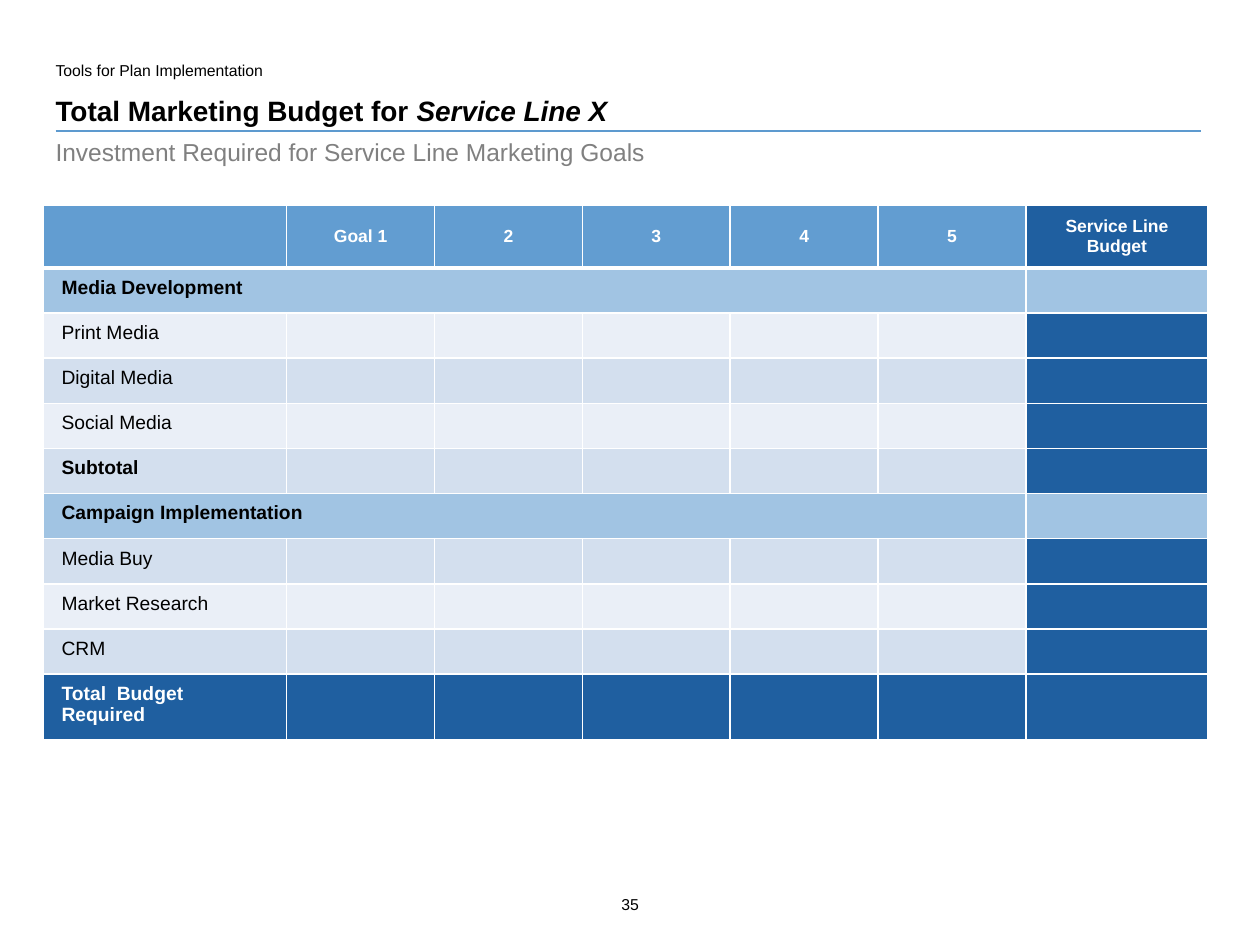
from dataclasses import dataclass
from lxml.etree import SubElement
from pptx import Presentation
from pptx.dml.color import RGBColor as Rgb
from pptx.enum.shapes import MSO_CONNECTOR as Link
from pptx.enum.text import MSO_ANCHOR as Anchor, PP_ALIGN as Align
from pptx.oxml.ns import qn
from pptx.util import Cm, Pt


@dataclass(frozen=True)
class Theme:
    font: str = "Arial"
    black: str = "000000"
    white: str = "FFFFFF"
    gray: str = "808080"
    rule: str = "5D9ACF"
    head: str = "629DD1"
    band: str = "A1C4E3"
    pale: str = "EAEFF7"
    mid: str = "D3DFEE"
    deep: str = "1F5FA0"
    title: int = 16
    lead: int = 14
    body: int = 11
    label: int = 10
    small: int = 9


class Page:
    """Draws styled elements on one blank slide."""

    def __init__(self, deck, theme):
        self.theme = theme
        self.slide = deck.slides.add_slide(deck.slide_layouts[6])

    def style(self, para, size, color, bold=False, align=Align.LEFT):
        para.alignment = align
        font = para.font
        font.name, font.size, font.bold = self.theme.font, Pt(size), bold
        font.color.rgb = Rgb.from_string(color)

    def text(self, box, runs, size, color, bold=False, align=Align.LEFT,
             anchor=Anchor.TOP, side=0, pad=0.1):
        frame = self.slide.shapes.add_textbox(*map(Cm, box)).text_frame
        frame.word_wrap = True
        frame.vertical_anchor = anchor
        frame.margin_left = frame.margin_right = Cm(side)
        frame.margin_top = frame.margin_bottom = Cm(pad)
        para = frame.paragraphs[0]
        self.style(para, size, color, bold, align)
        for words, slant in runs:
            run = para.add_run()
            run.text = words
            if slant:
                run.font.italic = True

    def line(self, left, right, top):
        line = self.slide.shapes.add_connector(
            Link.STRAIGHT, Cm(left), Cm(top), Cm(right), Cm(top))
        line.line.color.rgb = Rgb.from_string(self.theme.rule)
        line.line.width = Pt(0.75)
        SubElement(line._element.spPr, qn("a:effectLst"))

    def edge(self, cell, sides):
        props = cell._tc.get_or_add_tcPr()
        for spot, (side, width) in enumerate(sides.items()):
            edge = SubElement(props, qn(f"a:ln{side}"), w=str(Pt(width)))
            fill = SubElement(edge, qn("a:solidFill"))
            SubElement(fill, qn("a:srgbClr"), val=self.theme.white)
            props.insert(spot, edge)

    def cell(self, cell, words, fill, size, color, bold, align, anchor, sides):
        cell.fill.solid()
        cell.fill.fore_color.rgb = Rgb.from_string(fill)
        cell.margin_left = cell.margin_right = Cm(0.36)
        cell.margin_top = cell.margin_bottom = Cm(0.18)
        cell.vertical_anchor = anchor
        para = cell.text_frame.paragraphs[0]
        self.style(para, size, color, bold, align)
        if words:
            para.add_run().text = words
        else:
            SubElement(para._p, qn("a:endParaRPr"), sz=str(size * 100))
        self.edge(cell, sides)

    def table(self, left, top, wide, high, heads, items):
        look = self.theme
        grid = self.slide.shapes.add_table(
            len(high), len(wide), Cm(left), Cm(top),
            Cm(sum(wide)), Cm(sum(high))).table
        grid.first_row = grid.horz_banding = False
        for col, width in zip(grid.columns, wide):
            col.width = Cm(width)
        for row, height in zip(grid.rows, high):
            row.height = Cm(height)
        last = len(wide) - 1
        for col, words in enumerate(heads):
            fill = look.deep if col == last else look.head
            self.cell(grid.cell(0, col), words, fill, look.label, look.white,
                      True, Align.CENTER, Anchor.MIDDLE,
                      dict(L=1, R=1, T=1, B=3))
        for row, (words, kind) in enumerate(items, 1):
            tint = {"band": look.band, "total": look.deep}.get(
                kind, look.mid if row % 2 else look.pale)
            color = look.white if kind == "total" else look.black
            sides = dict(L=1, R=1, T=3 if row == 1 else 1, B=1)
            for col in range(last + 1):
                deep = col == last and kind != "band"
                self.cell(grid.cell(row, col), "" if col else words,
                          look.deep if deep else tint, look.body, color,
                          kind != "item", Align.LEFT, Anchor.TOP, sides)
            if kind == "band":
                grid.cell(row, 0).merge(grid.cell(row, last - 1))


def main():
    deck = Presentation()
    deck.slide_width, deck.slide_height = Cm(25.4), Cm(19.05)
    look = Theme()
    page = Page(deck, look)
    left, width = 1.12, 23.1
    page.line(left, left + width, 2.64)
    page.text((11.84, 17.93, 1.73, 0.66), [("35", False)], look.small,
              look.black, align=Align.CENTER, side=0.1)
    page.text((left, 1.88, width, 0.69),
              [("Total Marketing Budget for ", False),
               ("Service Line X", True)],
              look.title, look.black, bold=True, anchor=Anchor.BOTTOM, pad=0)
    heads = ["", "Goal 1", "2", "3", "4", "5", "Service Line Budget"]
    items = [("Media Development", "band"), ("Print Media", "item"),
             ("Digital Media", "item"), ("Social Media", "item"),
             ("Subtotal", "sum"), ("Campaign Implementation", "band"),
             ("Media Buy", "item"), ("Market Research", "item"),
             ("CRM", "item"), ("Total  Budget Required", "total")]
    page.table(0.88, 4.13, [4.9] + [2.98] * 5 + [3.67],
               [1.27] + [0.91] * 9 + [1.32], heads, items)
    page.text((left, 2.67, width, 0.76),
              [("Investment Required for Service Line Marketing Goals", False)],
              look.lead, look.gray)
    page.text((left, 1.12, 7.34, 0.51),
              [("Tools for Plan Implementation", False)],
              look.small, look.black)
    deck.save("out.pptx")


if __name__ == "__main__":
    main()
